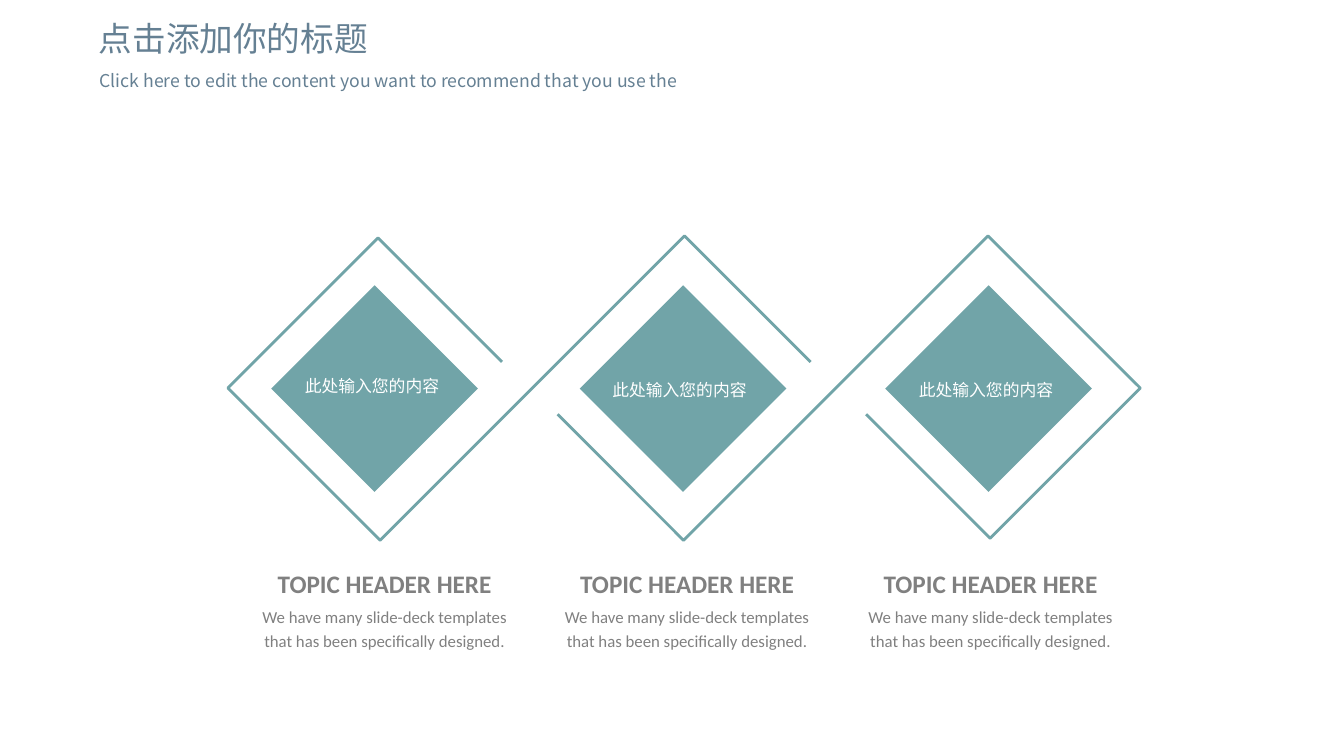
from lxml import etree
from pptx import Presentation
from pptx.dml.color import RGBColor
from pptx.enum import shapes, text
from pptx.oxml import ns
from pptx.util import Inches, Pt

COLORS = {"teal": "71A4A8", "slate": "658093", "gray": "808080", "white": "FFFFFF"}
CJK = "Noto Sans CJK JP"


def style(paragraph, size, color, face, spacing, bold=False):
    paragraph.line_spacing = spacing
    font = paragraph.font
    font.size = Pt(size)
    font.bold = bold
    font.name = face
    font.color.rgb = RGBColor.from_string(COLORS[color])
    latin = font._element.find(ns.qn("a:latin"))
    east_asian = etree.Element(ns.qn("a:ea"), typeface=face)
    latin.addnext(east_asian)


def add_text(left, top, width, height):
    frame = slide.shapes.add_textbox(
        Inches(left), Inches(top), Inches(width), Inches(height)).text_frame
    frame.word_wrap = True
    return frame


prs = Presentation()
prs.slide_width = Inches(13.33)
prs.slide_height = Inches(7.5)
slide = prs.slides.add_slide(prs.slide_layouts[5])

title = slide.shapes.title
title.left, title.top = Inches(0.88), Inches(0.17)
title.width, title.height = Inches(8.62), Inches(0.47)
heading = title.text_frame
heading.text = "点击添加你的标题"
subtitle = add_text(0.89, 0.65, 8.62, 0.33)
subtitle.text = "Click here to edit the content you want to recommend that you use the"
for frame, size in ((heading, 24), (subtitle, 12.6)):
    frame.auto_size = text.MSO_AUTO_SIZE.NONE
    frame.vertical_anchor = text.MSO_ANCHOR.MIDDLE
    frame.paragraphs[0].alignment = text.PP_ALIGN.LEFT
    style(frame.paragraphs[0], size, "slate", CJK, 0.9)

left_ribbon = [(8.04, 3.59), (6.79, 2.34), (3.77, 5.36),
               (2.26, 3.85), (3.75, 2.36), (4.98, 3.59)]
right_ribbon = [(13.57 - x, 7.7 - y) for x, y in left_ribbon]
for ribbon in (left_ribbon, right_ribbon):
    corners = [(Inches(x), Inches(y)) for x, y in ribbon]
    builder = slide.shapes.build_freeform(*corners[0])
    builder.add_line_segments(corners[1:], close=False)
    outline = builder.convert_to_shape()
    outline.shadow.inherit = False
    outline.fill.background()
    outline.line.color.rgb = RGBColor.from_string(COLORS["teal"])
    outline.line.width = Pt(2)

for left in (2.99, 6.05, 9.08):
    diamond = slide.shapes.add_shape(
        shapes.MSO_SHAPE.RECTANGLE,
        Inches(left), Inches(3.13), Inches(1.45), Inches(1.45))
    diamond.rotation = 315
    diamond.shadow.inherit = False
    diamond.fill.solid()
    diamond.fill.fore_color.rgb = RGBColor.from_string(COLORS["teal"])
    diamond.line.fill.background()

for left, top in ((2.78, 3.64), (5.83, 3.68), (8.87, 3.68)):
    label = add_text(left, top, 1.82, 0.34)
    label.text = "此处输入您的内容"
    label.paragraphs[0].alignment = text.PP_ALIGN.CENTER
    style(label.paragraphs[0], 12, "white", CJK, 1.2)

for left in (2.52, 5.52, 8.53):
    topic = add_text(left, 5.58, 2.59, 0.88)
    topic.margin_left = topic.margin_right = topic.margin_top = topic.margin_bottom = 0
    topic.text = ("TOPIC HEADER HERE\n"
                  "We have many slide-deck templates that has been specifically designed.")
    header, body = topic.paragraphs
    header.alignment = body.alignment = text.PP_ALIGN.CENTER
    body.space_before = Pt(3)
    style(header, 18, "gray", "Calibri", 1.2, bold=True)
    style(body, 12, "gray", "Calibri", 1.2)

prs.save("out.pptx")
